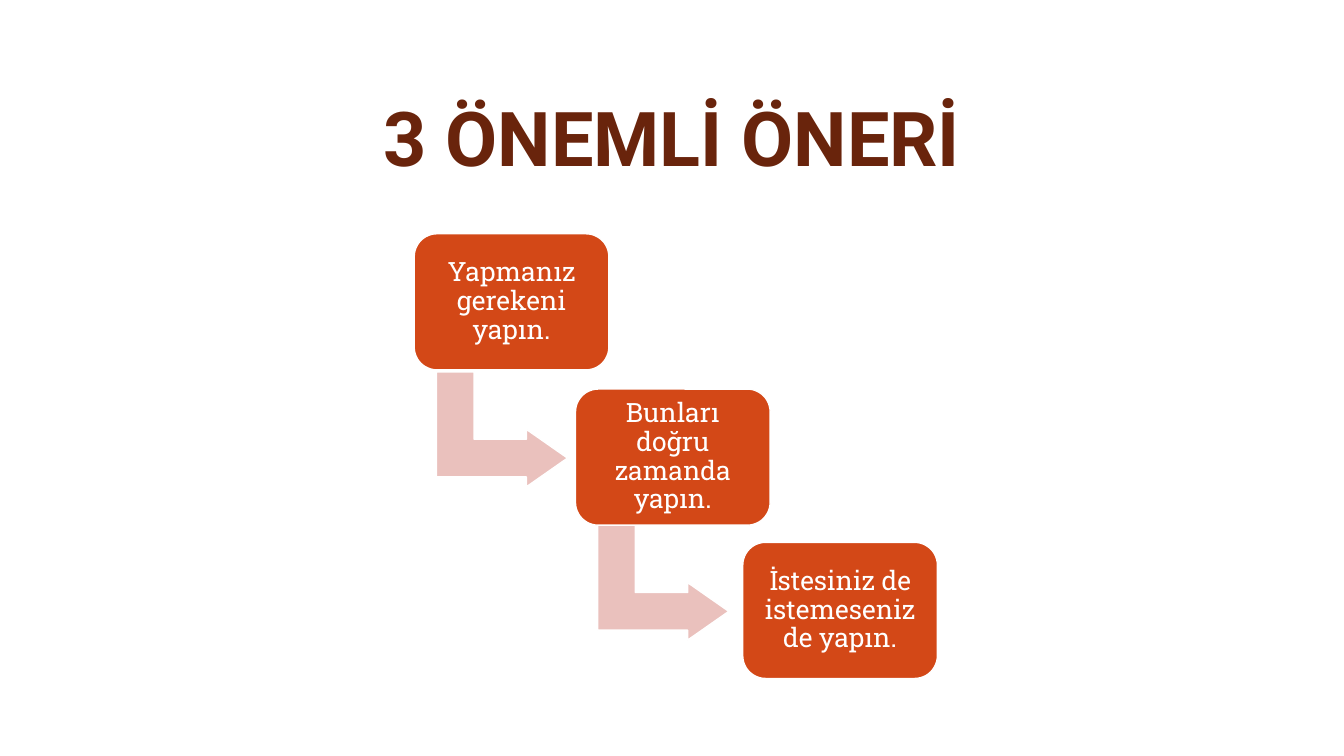
from dataclasses import dataclass
from typing import Optional

from pptx import Presentation
from pptx.dml.color import RGBColor
from pptx.enum.shapes import MSO_SHAPE
from pptx.enum.text import MSO_ANCHOR, PP_ALIGN
from pptx.util import Pt

TITLE_BROWN = RGBColor(0x69, 0x24, 0x0C)
STEP_ORANGE = RGBColor(0xD3, 0x48, 0x17)
ARROW_PINK = RGBColor(0xEA, 0xC1, 0xBD)
WHITE = RGBColor(0xFF, 0xFF, 0xFF)

STEP_W, STEP_H = 139, 97.2
ARROW_W, ARROW_H = 82.1, 93.6
ARROW_INDENT = 21.6


@dataclass
class Step:
    text: str
    left: float
    top: float
    arrow_top: Optional[float] = None


STEPS = [
    Step("Yapmanız gerekeni yapın.", 295.9, 167, 259.9),
    Step("Bunları doğru zamanda yapın.", 411.1, 277.9, 369.4),
    Step("İstesiniz de istemeseniz de yapın.", 530.6, 387.4),
]


def add_shape(s, kind, left: float, top: float, width: float, height: float,
              fill: RGBColor, adjustments: list[float]):
    sp = s.shapes.add_shape(kind, Pt(left), Pt(top), Pt(width), Pt(height))
    sp.shadow.inherit = False
    sp.fill.solid()
    sp.fill.fore_color.rgb = fill
    sp.line.color.rgb = WHITE
    sp.line.width = Pt(1)
    for i, value in enumerate(adjustments):
        sp.adjustments[i] = value
    return sp


def write(sp, text: str, font: str, size: float, color: RGBColor, bold: bool = False) -> None:
    tf = sp.text_frame
    tf.word_wrap = True
    tf.vertical_anchor = MSO_ANCHOR.MIDDLE
    p = tf.paragraphs[0]
    p.alignment = PP_ALIGN.CENTER
    p.line_spacing = 0.9
    r = p.add_run()
    r.text = text
    r.font.name = font
    r.font.size = Pt(size)
    r.font.bold = bold
    r.font.color.rgb = color


def add_step(s, step: Step) -> None:
    if step.arrow_top is not None:
        arrow = add_shape(s, MSO_SHAPE.BENT_UP_ARROW, step.left + ARROW_INDENT, step.arrow_top,
                          ARROW_W, ARROW_H, ARROW_PINK, [0.328, 0.25, 0.358])
        arrow.rotation = 90
    box = add_shape(s, MSO_SHAPE.ROUNDED_RECTANGLE, step.left, step.top,
                    STEP_W, STEP_H, STEP_ORANGE, [0.167])
    tf = box.text_frame
    tf.margin_left = tf.margin_right = tf.margin_top = tf.margin_bottom = Pt(5.7)
    write(box, step.text, "Roboto Slab", 19, WHITE)


def main() -> None:
    prs = Presentation()
    prs.slide_width, prs.slide_height = Pt(960), Pt(540)
    s = prs.slides.add_slide(prs.slide_layouts[6])
    title = s.shapes.add_textbox(Pt(84), Pt(38.2), Pt(792), Pt(126.7))
    write(title, "3 ÖNEMLİ ÖNERİ", "Roboto", 54, TITLE_BROWN, bold=True)
    for step in STEPS:
        add_step(s, step)
    prs.save("out.pptx")


if __name__ == "__main__":
    main()
